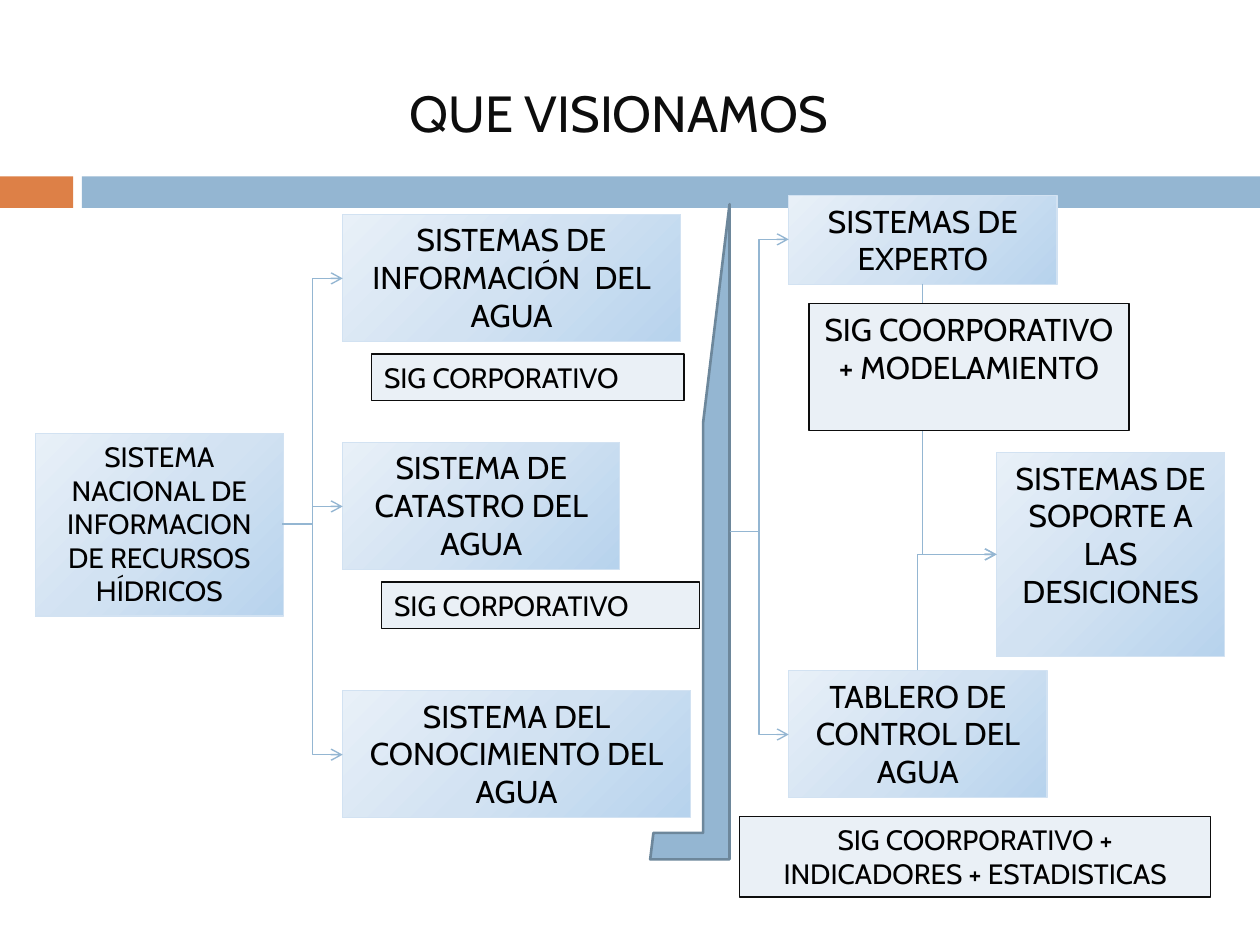
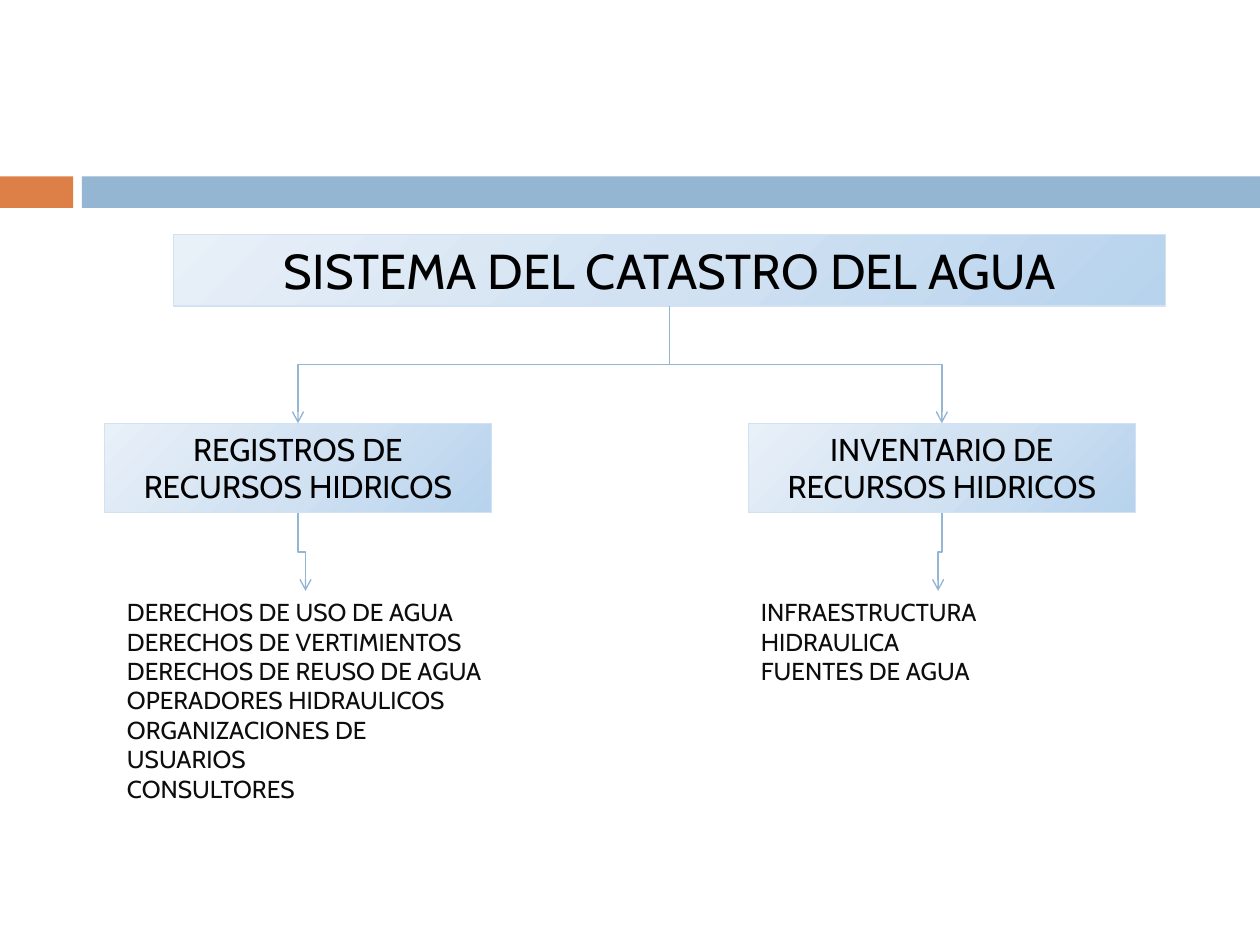
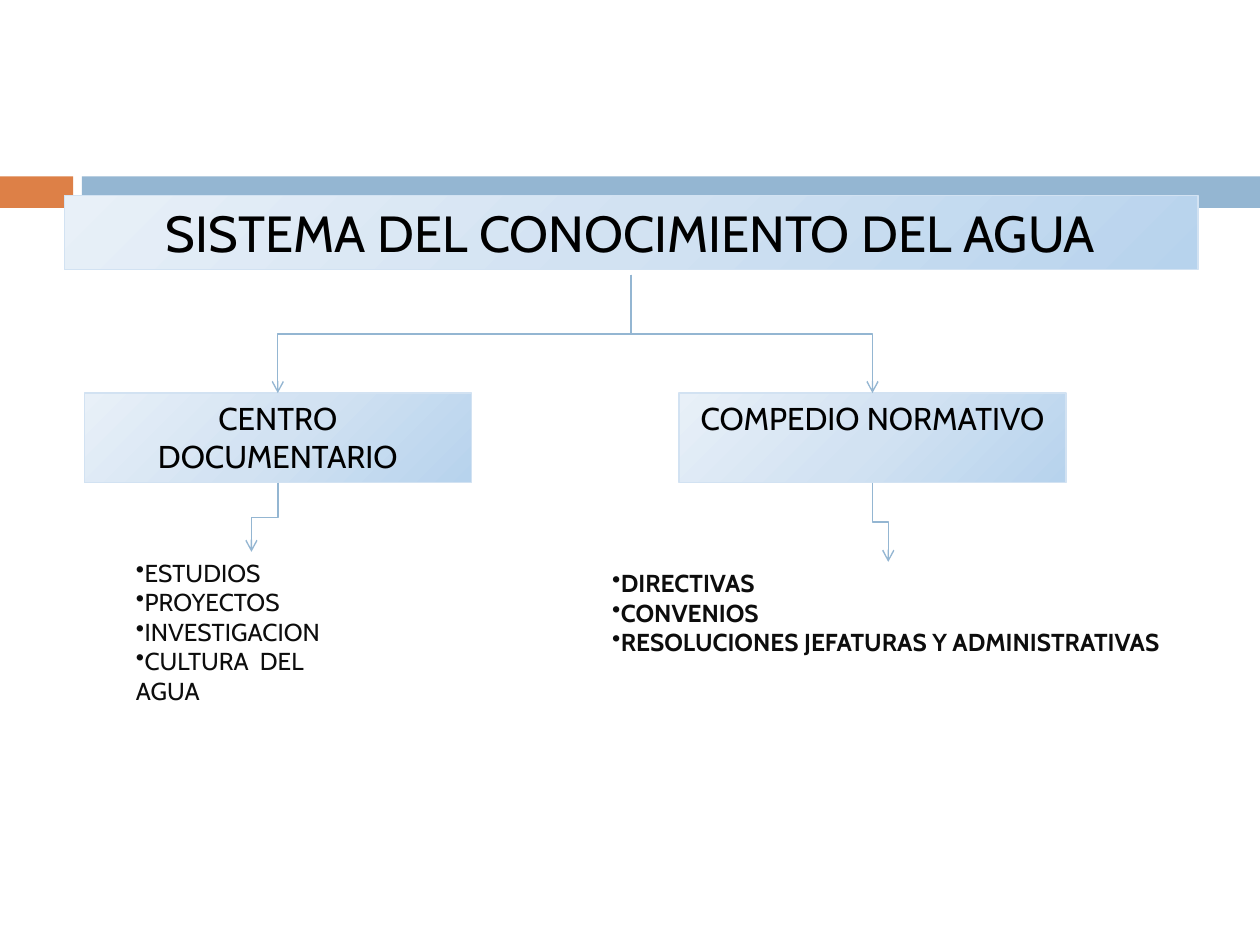
"""Build three slides on a national water information system."""
from copy import deepcopy
from dataclasses import dataclass

from lxml.etree import SubElement
from pptx import Presentation
from pptx.dml.color import RGBColor
from pptx.enum.shapes import MSO_CONNECTOR, MSO_SHAPE
from pptx.enum.text import MSO_ANCHOR, PP_ALIGN
from pptx.oxml.ns import qn
from pptx.shapes.autoshape import Shape
from pptx.slide import Slide
from pptx.text.text import TextFrame
from pptx.util import Inches, Pt

FONT = "Cabin"
BLACK, INK = "000000", "0D0D0D"
BLUE, SLATE, ORANGE = "94B6D2", "6D879B", "DD8047"
PALE, EDGE = "EAF0F6", "D2E2F2"
SHADES = ["B7D3ED", EDGE, "E8F0F8"]
CENTER, LEFT = PP_ALIGN.CENTER, PP_ALIGN.LEFT


@dataclass
class Box:
    """A framed text; plain boxes have a dark edge and a flat fill."""
    text: str
    left: float
    top: float
    width: float
    height: float
    size: int = 18
    plain: bool = False
    align: PP_ALIGN = CENTER


@dataclass
class Link:
    """An elbow arrow; its route is across, down or corner."""
    start: tuple[float, float]
    end: tuple[float, float]
    route: str = "across"


@dataclass
class Items:
    """A list of short lines without a frame."""
    lines: list[str]
    left: float
    top: float
    width: float
    height: float
    mark: str = ""
    size: float = 14
    bold: bool = False
    align: PP_ALIGN = LEFT


def color(code: str) -> RGBColor:
    """Turn a hex string into a colour."""
    return RGBColor.from_string(code)


def write(frame: TextFrame, items: Items, tint: str) -> None:
    """Fill a text frame, one paragraph a line."""
    frame.word_wrap = True
    frame.vertical_anchor = MSO_ANCHOR.TOP
    for index, line in enumerate(items.lines):
        para = frame.add_paragraph() if index else frame.paragraphs[0]
        para.alignment = items.align
        if items.mark:
            props = para._p.get_or_add_pPr()
            props.set("marL", "0")
            props.set("indent", "0")
            SubElement(props, qn("a:buChar")).set("char", items.mark)
        run = para.add_run()
        run.text = line
        run.font.name = FONT
        run.font.size = Pt(items.size)
        run.font.bold = items.bold
        run.font.color.rgb = color(tint)


def add_form(slide: Slide, kind: MSO_SHAPE, place: tuple[float, ...], fill: str = "",
             edge: str = "", weight: float = 0.75) -> Shape:
    """Add a preset shape; with no fill named it gets the blue fade."""
    form = slide.shapes.add_shape(kind, *map(Inches, place))
    form.shadow.inherit = False
    if fill:
        form.fill.solid()
        form.fill.fore_color.rgb = color(fill)
    else:
        form.fill.gradient()
        form.fill.gradient_angle = 135
        stops = form.element.spPr.find(".//" + qn("a:gsLst"))
        stops.insert(1, deepcopy(stops[0]))
        for index, stop in enumerate(form.fill.gradient_stops):
            stop.position = index / 2
            stop.color.rgb = color(SHADES[index])
    if edge:
        form.line.color.rgb = color(edge)
        form.line.width = Pt(weight)
    else:
        form.line.fill.background()
    return form


def add_box(slide: Slide, box: Box) -> None:
    """Draw a framed text."""
    place = (box.left, box.top, box.width, box.height)
    fill, edge = (PALE, INK) if box.plain else ("", EDGE)
    form = add_form(slide, MSO_SHAPE.RECTANGLE, place, fill, edge)
    write(form.text_frame, Items([box.text], *place, size=box.size, align=box.align), BLACK)


def add_items(slide: Slide, items: Items) -> None:
    """Draw lines of text without a frame."""
    place = (items.left, items.top, items.width, items.height)
    write(slide.shapes.add_textbox(*map(Inches, place)).text_frame, items, INK)


def add_link(slide: Slide, link: Link) -> None:
    """Draw an elbow arrow, turned on its side when it leaves upright."""
    (x1, y1), (x2, y2) = link.start, link.end
    ends, turn = (x1, y1, x2, y2), 0
    if link.route != "across":
        turn = 270 if (x2 - x1) * (y2 - y1) > 0 else 90
        sign = 1 if turn == 270 else -1
        mid_x, mid_y = (x1 + x2) / 2, (y1 + y2) / 2
        dx, dy = sign * (x2 - x1) / 2, sign * (y2 - y1) / 2
        ends = (mid_x + dy, mid_y - dx, mid_x - dy, mid_y + dx)
    line = slide.shapes.add_connector(MSO_CONNECTOR.ELBOW, *map(Inches, ends))
    props = line.element.spPr
    if turn:
        props.find(qn("a:xfrm")).set("rot", str(turn * 60000))
    if link.route == "corner":
        props.find(qn("a:prstGeom")).set("prst", "bentConnector2")
    line.line.color.rgb = color(BLUE)
    line.line.width = Pt(0.79)
    SubElement(props.find(qn("a:ln")), qn("a:tailEnd")).set("type", "arrow")
    SubElement(props, qn("a:effectLst"))


def new_slide(deck: Presentation) -> Slide:
    """Add a blank slide with the two bands."""
    slide = deck.slides.add_slide(deck.slide_layouts[6])
    add_form(slide, MSO_SHAPE.RECTANGLE, (0, 1.4, 0.58, 0.25), ORANGE)
    add_form(slide, MSO_SHAPE.RECTANGLE, (0.65, 1.4, 9.35, 0.25), BLUE)
    return slide


def draw_vision(deck: Presentation) -> None:
    """Draw the map of all systems."""
    slide = new_slide(deck)
    add_items(slide, Items(["QUE VISIONAMOS"], 1.61, 0.6, 6.61, 0.58, size=29, align=CENTER))
    for box in (
        Box("SISTEMA NACIONAL DE INFORMACION DE RECURSOS HÍDRICOS", 0.28, 3.44, 1.97, 1.45, 16),
        Box("SISTEMAS DE INFORMACIÓN  DEL AGUA", 2.72, 1.7, 2.68, 1.01),
        Box("SISTEMA DEL CONOCIMIENTO DEL AGUA", 2.72, 5.48, 2.76, 1.01),
        Box("SISTEMA DE CATASTRO DEL AGUA", 2.72, 3.51, 2.2, 1.01),
        Box("SISTEMAS DE EXPERTO", 6.26, 1.55, 2.13, 0.71),
        Box("TABLERO DE CONTROL DEL AGUA", 6.26, 5.32, 2.05, 1.01),
        Box("SISTEMAS DE SOPORTE A LAS DESICIONES", 7.91, 3.59, 1.81, 1.62),
    ):
        add_box(slide, box)
    wall = add_form(slide, MSO_SHAPE.HALF_FRAME, (5.16, 1.62, 0.63, 5.2), BLUE, SLATE, 1.5)
    wall.rotation = 180
    for y in (2.21, 4.02, 5.99):
        add_link(slide, Link((2.24, 4.16), (2.72, y)))
    for y in (1.9, 5.83):
        add_link(slide, Link((5.79, 4.22), (6.26, y)))
    for start in ((7.32, 2.25), (7.28, 5.32)):
        add_link(slide, Link(start, (7.91, 4.4), "corner"))
    for note in (
        Box("SIG CORPORATIVO", 2.95, 2.81, 2.48, 0.37, 16, True, LEFT),
        Box("SIG CORPORATIVO", 3.03, 4.62, 2.52, 0.37, 16, True, LEFT),
        Box("SIG COORPORATIVO + MODELAMIENTO", 6.42, 2.41, 2.54, 1.01, 18, True),
        Box("SIG COORPORATIVO + INDICADORES + ESTADISTICAS", 5.87, 6.48, 3.74, 0.64, 16, True),
    ):
        add_box(slide, note)


def draw_tree(deck: Presentation, root: Box, fork: float,
              limbs: list[tuple[Box, Items]]) -> None:
    """Draw a root box that forks into boxes, each with its list."""
    slide = new_slide(deck)
    add_box(slide, root)
    for box, items in limbs:
        mid = box.left + box.width / 2
        add_box(slide, box)
        add_link(slide, Link((root.left + root.width / 2, fork), (mid, box.top), "down"))
        add_items(slide, items)
        tip = (items.left + items.width / 2, items.top)
        add_link(slide, Link((mid, box.top + box.height), tip, "down"))


def main() -> None:
    """Build and save the deck."""
    deck = Presentation()
    deck.slide_width, deck.slide_height = Inches(10), Inches(7.5)
    draw_vision(deck)
    draw_tree(deck, Box("SISTEMA DEL CATASTRO DEL AGUA", 1.38, 1.86, 7.87, 0.57, 28), 2.43, [
        (Box("REGISTROS DE RECURSOS HIDRICOS", 0.83, 3.36, 3.07, 0.71),
         Items(["DERECHOS DE USO DE AGUA", "DERECHOS DE VERTIMIENTOS",
                "DERECHOS DE REUSO DE AGUA", "OPERADORES HIDRAULICOS",
                "ORGANIZACIONES DE USUARIOS", "CONSULTORES"], 0.91, 4.69, 3.03, 1.51)),
        (Box("INVENTARIO DE RECURSOS HIDRICOS", 5.94, 3.36, 3.07, 0.71),
         Items(["INFRAESTRUCTURA HIDRAULICA", "FUENTES DE AGUA"], 5.94, 4.69, 3.01, 0.57)),
    ])
    draw_tree(deck, Box("SISTEMA DEL CONOCIMIENTO DEL AGUA", 0.51, 1.55, 9, 0.59, 29), 2.18, [
        (Box("CENTRO DOCUMENTARIO", 0.67, 3.12, 3.07, 0.71),
         Items(["ESTUDIOS", "PROYECTOS", "INVESTIGACION", "CULTURA  DEL AGUA"],
               0.98, 4.38, 2.03, 1.04, "•")),
        (Box("COMPEDIO NORMATIVO", 5.39, 3.12, 3.07, 0.71),
         Items(["DIRECTIVAS", "CONVENIOS", "RESOLUCIONES JEFATURAS Y ADMINISTRATIVAS"],
               4.76, 4.46, 4.58, 0.81, "•", bold=True)),
    ])
    deck.save("out.pptx")


if __name__ == "__main__":
    main()
